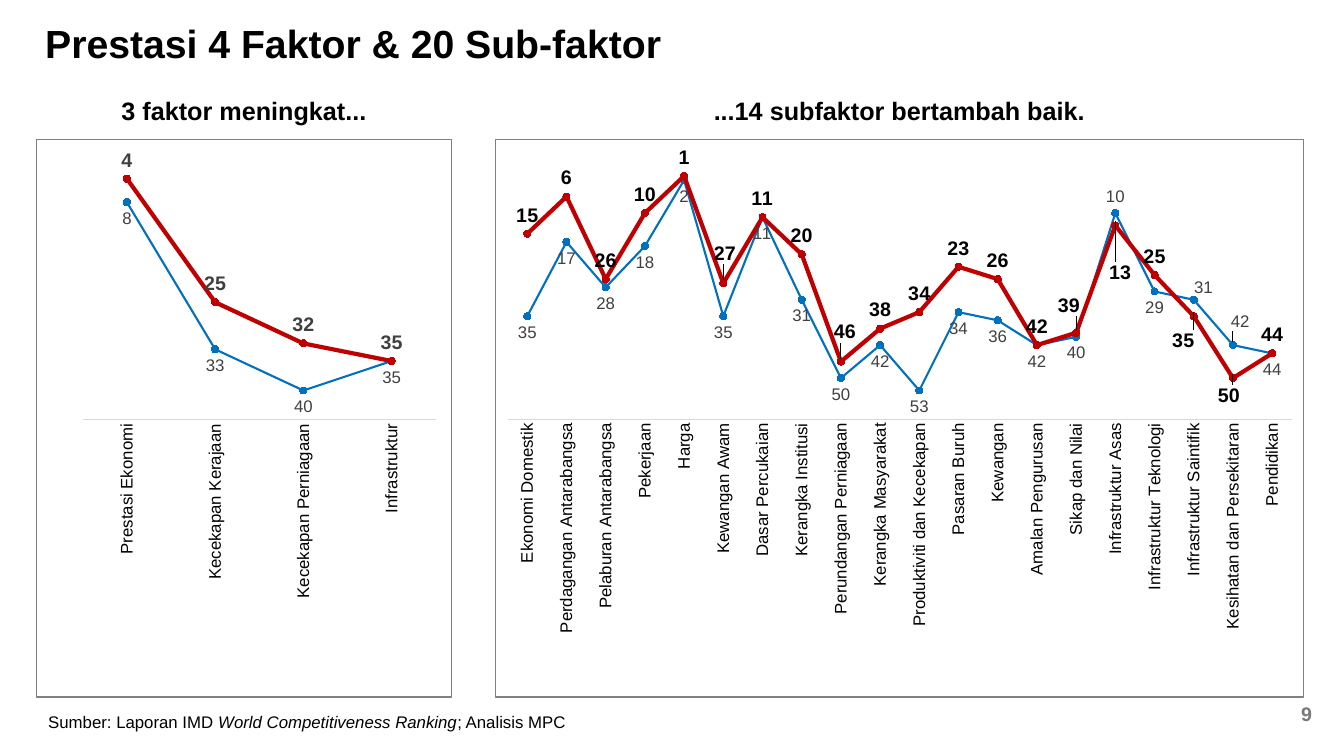
"""Build a slide with two line charts of competitiveness factors and sub-factors."""
from lxml import etree
from pptx import Presentation
from pptx.chart.data import CategoryChartData as Data
from pptx.dml.color import RGBColor as RGB
from pptx.enum.chart import XL_AXIS_CROSSES as Cross
from pptx.enum.chart import XL_CHART_TYPE as Kind
from pptx.enum.chart import XL_LABEL_POSITION as Spot
from pptx.enum.chart import XL_MARKER_STYLE as Mark
from pptx.enum.chart import XL_TICK_MARK as Tick
from pptx.enum.text import MSO_ANCHOR as Anchor
from pptx.enum.text import PP_ALIGN as Align
from pptx.oxml import parse_xml
from pptx.oxml.ns import nsdecls, qn
from pptx.util import Inches, Pt

HUES = {"black": "000000", "blue": "0070C0", "red": "C00000", "dark": "404040",
        "gray": "797979", "edge": "808080", "axis": "D9D9D9"}


def style(font, size, hue="black", bold=False):
    font.name, font.size, font.bold = "Arial", Pt(size), bold
    font.color.rgb = RGB.from_string(HUES[hue])


def layout(**parts):
    node = etree.Element(qn("c:layout"))
    manual = etree.SubElement(node, qn("c:manualLayout"))
    for tag, val in parts.items():
        etree.SubElement(manual, qn("c:" + tag)).set("val", str(val))
    return node


deck = Presentation()
deck.slide_width, deck.slide_height = Inches(13.33), Inches(7.5)
slide = deck.slides.add_slide(deck.slide_layouts[6])

charts = [
    dict(left=4.91, width=8.02, top=60, hue="black",
         plot=dict(x=0.015, y=0.058, w=0.971, h=0.444),
         cats=["Ekonomi Domestik", "Perdagangan Antarabangsa", "Pelaburan Antarabangsa",
               "Pekerjaan", "Harga", "Kewangan Awam", "Dasar Percukaian",
               "Kerangka Institusi", "Perundangan Perniagaan", "Kerangka Masyarakat",
               "Produktiviti dan Kecekapan", "Pasaran Buruh", "Kewangan",
               "Amalan Pengurusan", "Sikap dan Nilai", "Infrastruktur Asas",
               "Infrastruktur Teknologi", "Infrastruktur Saintifik",
               "Kesihatan dan Persekitaran", "Pendidikan"],
         vals=[[35, 17, 28, 18, 2, 35, 11, 31, 50, 42,
                53, 34, 36, 42, 40, 10, 29, 31, 42, 44],
               [15, 6, 26, 10, 1, 27, 11, 20, 46, 38,
                34, 23, 26, 42, 39, 13, 25, 35, 50, 44]],
         moves=[{15: (0, 0), 17: (0.012, 0.007), 18: (0.009, -0.012)},
                {5: (0.002, -0.02), 8: (0.005, -0.02), 14: (-0.009, -0.016),
                 15: (0.006, 0.118), 17: (-0.013, 0.077), 18: (-0.005, 0.065)}]),
    dict(left=0.36, width=4.12, top=45, hue="dark",
         plot=dict(x=0.111, y=0.028, w=0.852, h=0.475),
         cats=["Prestasi Ekonomi", "Kecekapan Kerajaan", "Kecekapan Perniagaan",
               "Infrastruktur"],
         vals=[[8, 33, 40, 35], [4, 25, 32, 35]], moves=[{}, {}]),
]

for item in charts:
    data = Data()
    data.categories = item["cats"]
    for num, vals in enumerate(item["vals"], 1):
        data.add_series(f"Series {num}", vals)
    chart = slide.shapes.add_chart(
        Kind.LINE_MARKERS, Inches(item["left"]), Inches(1.38),
        Inches(item["width"]), Inches(5.54), data).chart
    chart.has_title = chart.has_legend = False
    style(chart.font, 10)
    chart.font.name = "Karla"
    chart.plots[0].vary_by_categories = False

    root = chart._chartSpace
    root.find(qn("c:chart")).addnext(parse_xml(
        f'<c:spPr {nsdecls("c", "a")}><a:noFill/><a:ln w="9525"><a:solidFill>'
        f'<a:srgbClr val="{HUES["edge"]}"/></a:solidFill></a:ln></c:spPr>'))
    area = root.find(".//" + qn("c:plotArea"))
    for old in area.findall(qn("c:layout")):
        area.remove(old)
    area.insert(0, layout(layoutTarget="inner", xMode="edge", yMode="edge", **item["plot"]))

    ranks = chart.value_axis
    ranks.minimum_scale, ranks.maximum_scale = 0, item["top"]
    ranks.reverse_order = True
    ranks.crosses = Cross.MAXIMUM
    ranks.has_major_gridlines = False
    ranks.visible = False
    names = chart.category_axis
    names.major_tick_mark = names.minor_tick_mark = Tick.NONE
    names.format.line.color.rgb = RGB.from_string(HUES["axis"])
    names.format.line.width = Pt(0.75)
    style(names.tick_labels.font, 12)
    body = names._element.find(".//" + qn("a:bodyPr"))
    body.set("rot", "-5400000")
    body.set("vert", "horz")

    looks = [("blue", 1.5, Spot.BELOW, (12, "dark", False)),
             ("red", 3, Spot.ABOVE, (14, item["hue"], True))]
    for line, look, moves in zip(chart.plots[0].series, looks, item["moves"]):
        hue, width, spot, font = look
        color = RGB.from_string(HUES[hue])
        line.smooth = False
        line.format.line.color.rgb = color
        line.format.line.width = Pt(width)
        line.marker.style, line.marker.size = Mark.CIRCLE, 5
        line.marker.format.fill.solid()
        line.marker.format.fill.fore_color.rgb = color
        line.marker.format.line.color.rgb = color
        labels = line.data_labels
        labels.show_value, labels.position = True, spot
        style(labels.font, *font)
        for idx, (dx, dy) in moves.items():
            label = line.points[idx].data_label
            style(label.font, *font)
            label.position = Spot.ABOVE
            mark = line._element.xpath(f"c:dLbls/c:dLbl/c:idx[@val='{idx}']")[0]
            mark.addnext(layout(x=dx, y=dy))

texts = [
    ((0.35, 0.13, 12.64, 0.6), ["Prestasi 4 Faktor & 20 Sub-faktor"],
     (28, "black", True), Align.LEFT, Anchor.MIDDLE),
    ((12.64, 6.88, 0.47, 0.4), ["9"], (14, "gray", True), Align.RIGHT, Anchor.MIDDLE),
    ((4.91, 0.9, 8.02, 0.4), ["...14 subfaktor bertambah baik."],
     (18, "black", True), Align.CENTER, Anchor.TOP),
    ((0.36, 0.9, 4.12, 0.4), ["3 faktor meningkat..."],
     (18, "black", True), Align.CENTER, Anchor.TOP),
    ((0.38, 7.01, 5.38, 0.3),
     ["Sumber: Laporan IMD ", "World Competitiveness Ranking", "; Analisis MPC"],
     (12, "black", False), Align.LEFT, Anchor.TOP),
]
for place, parts, font, align, anchor in texts:
    frame = slide.shapes.add_textbox(*map(Inches, place)).text_frame
    frame.word_wrap = True
    frame.vertical_anchor = anchor
    para = frame.paragraphs[0]
    para.alignment = align
    for num, part in enumerate(parts):
        run = para.add_run()
        run.text = part
        style(run.font, *font)
        run.font.italic = num == 1

deck.save("out.pptx")
